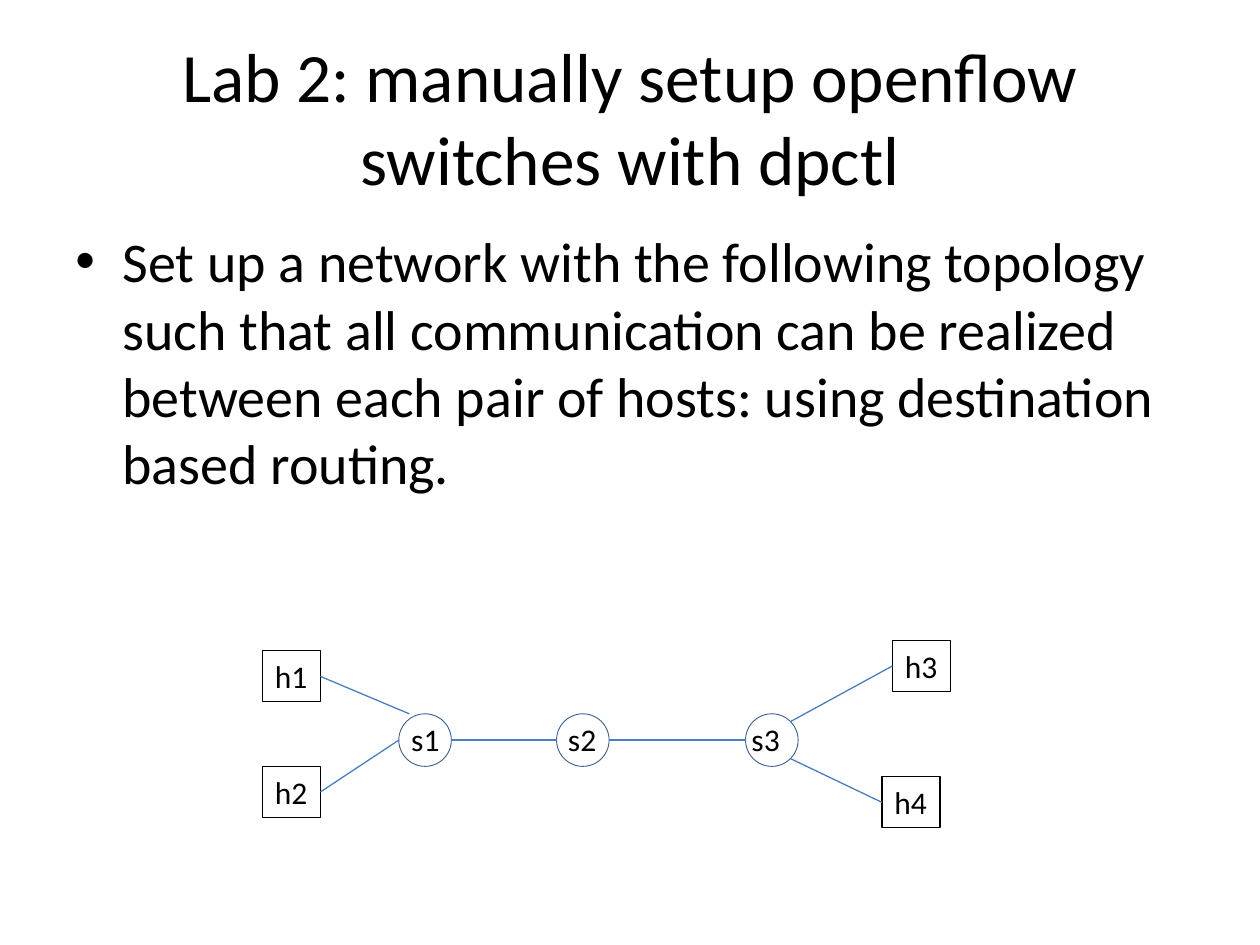
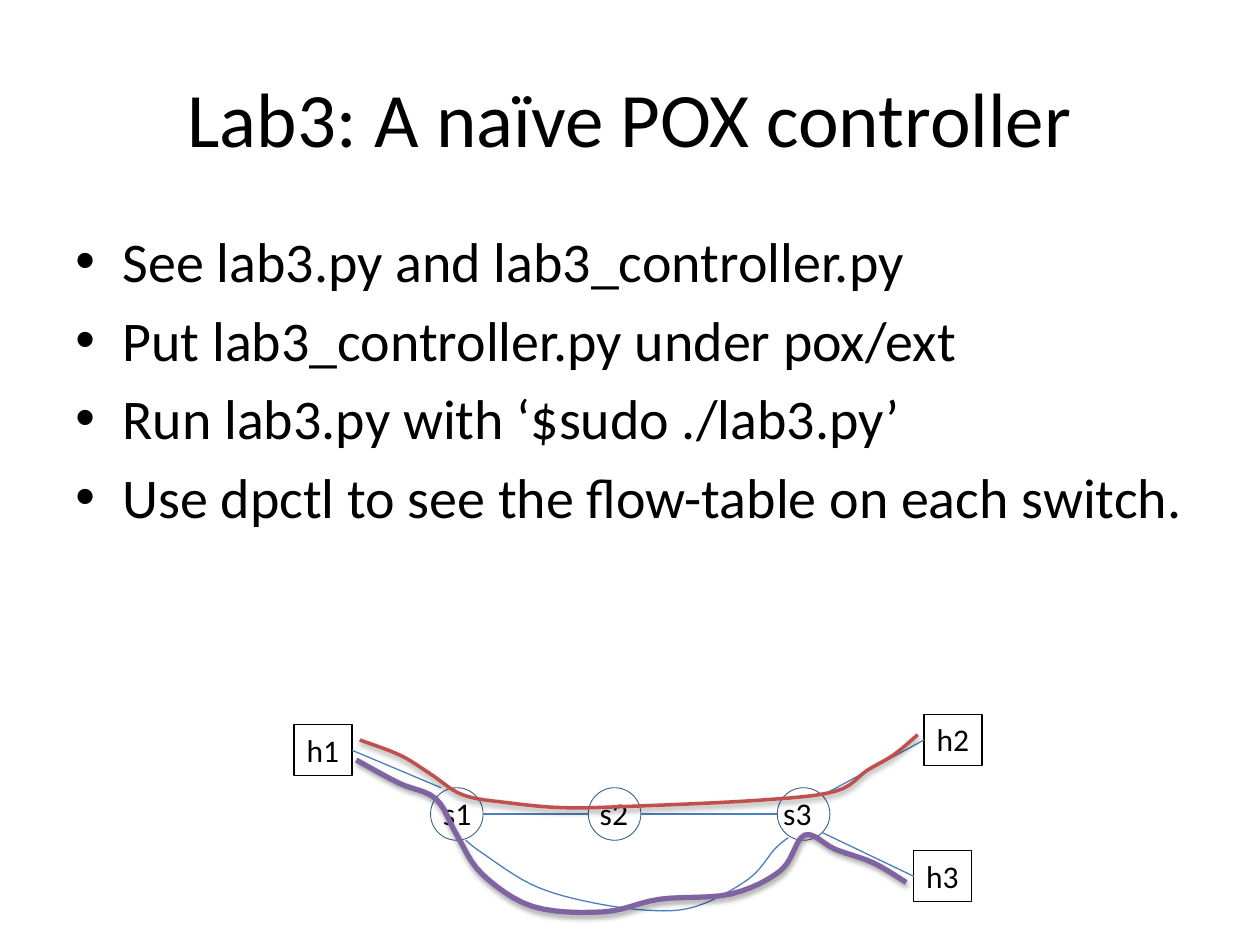
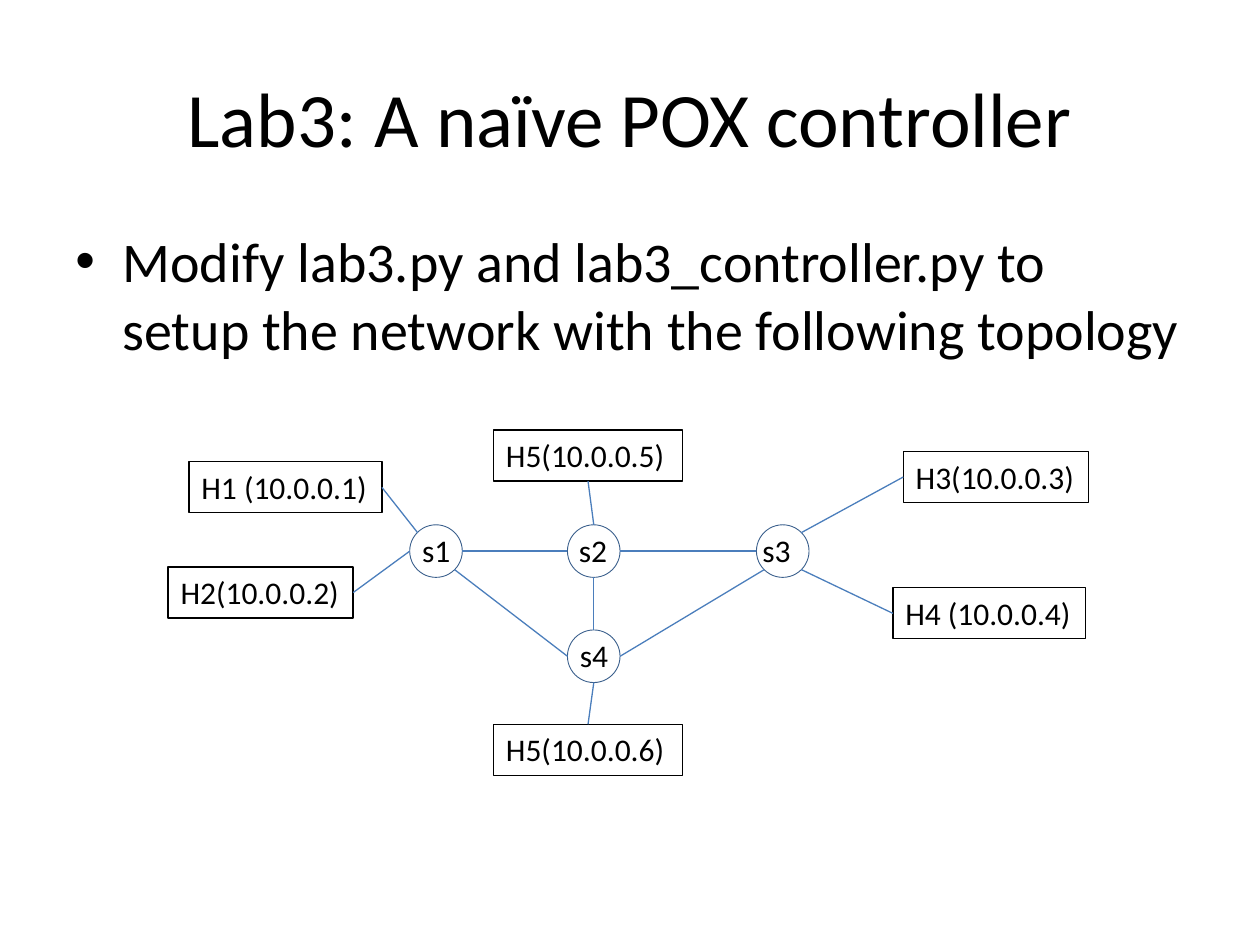
from dataclasses import dataclass

from lxml.etree import SubElement
from pptx import Presentation
from pptx.dml.color import RGBColor
from pptx.enum.shapes import MSO_CONNECTOR as Wire, MSO_SHAPE as Preset
from pptx.enum.text import MSO_ANCHOR as Anchor, MSO_AUTO_SIZE as Fit, PP_ALIGN as Align
from pptx.oxml.ns import qn
from pptx.util import Cm, Pt

Pair = tuple[float, float]

FONT = "Calibri"
BLACK = "000000"
SWITCH_EDGE = "3A5F8C"
WIRE_BLUE = "4B7EBC"
ROUTE_RED = "C0504D"
ROUTE_PURPLE = "8064A2"

TITLE_SIZE, BODY_SIZE, LABEL_SIZE = 44, 32, 18
MARGIN, CONTENT_WIDTH = 1.27, 22.86
TITLE_TOP, TITLE_HEIGHT, BODY_TOP = 0.76, 3.18, 4.45
BULLET_INDENT = 0.95

TOP, LEFT, BOTTOM, RIGHT = (0.5, 0), (0, 0.5), (0.5, 1), (1, 0.5)
TOP_LEFT, TOP_RIGHT = (0.15, 0.15), (0.85, 0.15)
BOTTOM_LEFT, BOTTOM_RIGHT = (0.15, 0.85), (0.85, 0.85)
OVER_LEFT = (0.2, 0)
SIDES = {TOP: 0, LEFT: 1, BOTTOM: 2, RIGHT: 3}

SWITCH_SIZE = 1.06
SWITCH_ROW = {"s1": 0, "s2": 3.18, "s3": 6.99}
LOWER_DROP = 2.12
LABEL_TABS = (3.16, 6.86)
ROW_LABEL_WIDTH, LOWER_LABEL_WIDTH = 8.31, 1.09
HOST_HEIGHT = 1.03
SHORT, ADDRESS, SPACED_ADDRESS, WRAPPED = 1.17, 3.73, 3.89, 3.81
UPPER_LEFT, UPPER_RIGHT, LOWER_RIGHT = (-2.75, -1.27), (9.95, -1.48), (9.74, 1.27)
CURVE_STEPS = 6


@dataclass(frozen=True)
class Host:
    label: str
    offset: Pair
    width: float = SHORT


@dataclass(frozen=True)
class Link:
    start: str
    start_spot: Pair
    end: str
    end_spot: Pair


@dataclass(frozen=True)
class Route:
    color: str
    weight: float
    stops: tuple[tuple[str, tuple[Pair, ...]], ...]
    shade: int = 0


@dataclass(frozen=True)
class Lab:
    title: str
    bullets: tuple[str, ...]
    origin: Pair
    hosts: tuple[Host, ...]
    links: tuple[Link, ...]
    routes: tuple[Route, ...] = ()
    lower_switch: bool = False
    title_size: float = TITLE_SIZE
    body_height: float = 12.57


BACKBONE = (Link("s1", RIGHT, "s2", LEFT), Link("s2", RIGHT, "s3", LEFT))


def right_links(upper: str, lower: str) -> tuple[Link, ...]:
    return (Link("s3", TOP_RIGHT, upper, LEFT), Link("s3", BOTTOM_RIGHT, lower, LEFT))


BYPASS = Route(WIRE_BLUE, 0.75, (
    ("s1", ((0.67, 1), (0.98, 1.24), (1.9, 1.83))),
    ("s2", ((-0.14, 2.14), (1.1, 2.33))),
    ("s3", ((-1.55, 2.26), (-0.55, 1.74), (-0.05, 1.17), (0.21, 0.95)))))
ROUTE_TO_H2 = Route(ROUTE_RED, 2, (
    ("h1", ((1.13, 0.3), (1.83, 0.6))),
    ("s1", ((0, -0.26), (0.62, 0.14), (1.5, 0.29))),
    ("s2", ((-0.5, 0.38), (0.67, 0.36))),
    ("s3", ((-0.36, 0.24), (1.1, 0.07), (1.71, -0.33))),
    ("h2", ((-0.52, 0.79), (-0.11, 0.4)))), shade=38)
ROUTE_TO_H3 = Route(ROUTE_PURPLE, 3, (
    ("h1", ((1.07, 0.69), (1.8, 1.14))),
    ("s1", ((0.1, 0.21), (0.5, 0.9), (0.98, 1.64), (1.95, 2.26))),
    ("s2", ((0.29, 2.36), (1.36, 2.12))),
    ("s3", ((-0.88, 2.02), (0.07, 1.57), (0.52, 0.9), (1.1, 1.17), (1.83, 1.43))),
    ("h3", ((-0.13, 0.62),))), shade=35)

DPCTL_LAB = Lab(
    "Lab 2: manually setup openflow switches with dpctl",
    ("Set up a network with the following topology such that all communication can be "
     "realized between each pair of hosts: using destination based routing.",),
    origin=(8.04, 14.39),
    hosts=(Host("h1", UPPER_LEFT), Host("h2", (-2.75, 1.06)),
           Host("h4", LOWER_RIGHT), Host("h3", UPPER_RIGHT)),
    links=(Link("h1", RIGHT, "s1", OVER_LEFT), Link("h2", RIGHT, "s1", LEFT),
           *BACKBONE, *right_links("h3", "h4")),
    title_size=39.6, body_height=6.99)

POX_LAB = Lab(
    "Lab3: A naïve POX controller",
    ("See lab3.py and lab3_controller.py",
     "Put lab3_controller.py under pox/ext",
     "Run lab3.py with ‘$sudo ./lab3.py’",
     "Use dpctl to see the flow-table on each switch."),
    origin=(8.68, 15.88),
    hosts=(Host("h1", UPPER_LEFT), Host("h3", LOWER_RIGHT), Host("h2", UPPER_RIGHT)),
    links=(Link("h1", RIGHT, "s1", OVER_LEFT), *BACKBONE, *right_links("h2", "h3")),
    routes=(BYPASS, ROUTE_TO_H2, ROUTE_TO_H3))

H1, H2, H3 = "H1 (10.0.0.1)", "H2(10.0.0.2)", "H3(10.0.0.3)"
H4, H5, H6 = "H4 (10.0.0.4)", "H5(10.0.0.5)", "H5(10.0.0.6)"
POX_EXERCISE = Lab(
    POX_LAB.title,
    ("Modify lab3.py and lab3_controller.py to setup the network with the following topology",),
    origin=(8.26, 10.58),
    hosts=(Host(H1, (-4.45, -1.27), SPACED_ADDRESS), Host(H2, (-4.87, 0.85), ADDRESS),
           Host(H4, LOWER_RIGHT, SPACED_ADDRESS), Host(H3, UPPER_RIGHT, ADDRESS),
           Host(H5, (1.69, -1.91), WRAPPED), Host(H6, (1.69, 4.02), WRAPPED)),
    links=(Link(H1, RIGHT, "s1", TOP_LEFT), Link(H2, RIGHT, "s1", LEFT),
           *BACKBONE, *right_links(H3, H4),
           Link("s1", BOTTOM_RIGHT, "s4", LEFT), Link("s2", BOTTOM, "s4", TOP),
           Link("s4", RIGHT, "s3", BOTTOM_LEFT),
           Link(H5, BOTTOM, "s2", TOP), Link(H6, TOP, "s4", BOTTOM)),
    lower_switch=True)


def rgb(code: str) -> RGBColor:
    return RGBColor.from_string(code)


def add_span(para, text: str, size: float) -> None:
    span = para.add_run()
    span.text = text
    span.font.name = FONT
    span.font.size = Pt(size)
    span.font.color.rgb = rgb(BLACK)


def outline(shape, color: str, weight: float) -> None:
    shape.line.color.rgb = rgb(color)
    shape.line.width = Pt(weight)


def make_hollow(shape, color: str, weight: float) -> None:
    shape.shadow.inherit = False
    shape.fill.background()
    outline(shape, color, weight)


def add_title(page, lab: Lab) -> None:
    title = page.shapes.title
    title.left, title.top = Cm(MARGIN), Cm(TITLE_TOP)
    title.width, title.height = Cm(CONTENT_WIDTH), Cm(TITLE_HEIGHT)
    frame = title.text_frame
    frame.auto_size = Fit.NONE
    frame.vertical_anchor = Anchor.MIDDLE
    para = frame.paragraphs[0]
    para.alignment = Align.CENTER
    add_span(para, lab.title, lab.title_size)


def add_bullets(page, lab: Lab) -> None:
    box = page.shapes.add_textbox(
        Cm(MARGIN), Cm(BODY_TOP), Cm(CONTENT_WIDTH), Cm(lab.body_height))
    frame = box.text_frame
    frame.word_wrap = True
    for index, text in enumerate(lab.bullets):
        para = frame.add_paragraph() if index else frame.paragraphs[0]
        if index:
            para.space_before = Pt(BODY_SIZE * 0.2)
        props = para._p.get_or_add_pPr()
        props.set("marL", str(Cm(BULLET_INDENT)))
        props.set("indent", str(-Cm(BULLET_INDENT)))
        SubElement(props, qn("a:buFont"), typeface="Arial")
        SubElement(props, qn("a:buChar"), char="•")
        add_span(para, text, BODY_SIZE)


def add_labels(page, left: float, top: float, width: float, names: list[str]) -> None:
    box = page.shapes.add_textbox(Cm(left), Cm(top), Cm(width), Cm(HOST_HEIGHT))
    frame = box.text_frame
    frame.word_wrap = True
    para = frame.paragraphs[0]
    if len(names) > 1:
        tabs = SubElement(para._p.get_or_add_pPr(), qn("a:tabLst"))
        for stop in LABEL_TABS:
            SubElement(tabs, qn("a:tab"), pos=str(Cm(stop)), algn="l")
    add_span(para, "\t".join(names), LABEL_SIZE)


def add_host(page, origin: Pair, host: Host):
    left, top = origin[0] + host.offset[0], origin[1] + host.offset[1]
    box = page.shapes.add_shape(
        Preset.RECTANGLE, Cm(left), Cm(top), Cm(host.width), Cm(HOST_HEIGHT))
    make_hollow(box, BLACK, 0.75)
    frame = box.text_frame
    frame.word_wrap = host.width == WRAPPED
    frame.auto_size = Fit.SHAPE_TO_FIT_TEXT
    frame.vertical_anchor = Anchor.TOP
    para = frame.paragraphs[0]
    para.alignment = Align.LEFT
    add_span(para, host.label, LABEL_SIZE)
    return box


def add_switch(page, left: float, top: float):
    ring = page.shapes.add_shape(
        Preset.OVAL, Cm(left), Cm(top), Cm(SWITCH_SIZE), Cm(SWITCH_SIZE))
    make_hollow(ring, SWITCH_EDGE, 0.5)
    return ring


def spot_on(shape, spot: Pair) -> tuple[int, int]:
    return (round(shape.left + spot[0] * shape.width), round(shape.top + spot[1] * shape.height))


def add_link(page, nodes: dict, link: Link) -> None:
    start, end = nodes[link.start], nodes[link.end]
    wire = page.shapes.add_connector(
        Wire.STRAIGHT, *spot_on(start, link.start_spot), *spot_on(end, link.end_spot))
    outline(wire, WIRE_BLUE, 0.75)
    SubElement(wire._element.spPr, qn("a:effectLst"))
    if start.auto_shape_type == Preset.RECTANGLE:
        wire.begin_connect(start, SIDES[link.start_spot])
    if end.auto_shape_type == Preset.RECTANGLE:
        wire.end_connect(end, SIDES[link.end_spot])


def spline(before: int, start: int, end: int, after: int, t: float) -> int:
    return round(start + t / 2 * (
        end - before
        + t * (2 * before - 5 * start + 4 * end - after)
        + t * t * (3 * (start - end) + after - before)))


def smooth(points: list[tuple[int, int]]) -> list[tuple[int, int]]:
    padded = [points[0], *points, points[-1]]
    curve = [points[0]]
    for window in zip(padded, padded[1:], padded[2:], padded[3:]):
        across, down = zip(*window)
        for step in range(1, CURVE_STEPS + 1):
            t = step / CURVE_STEPS
            curve.append((spline(*across, t), spline(*down, t)))
    return curve


def add_shade(shape, percent: int) -> None:
    effects = shape._element.spPr.find(qn("a:effectLst"))
    shadow = SubElement(effects, qn("a:outerShdw"), blurRad=str(Pt(3.1)),
                        dist=str(Pt(1.6)), dir="5400000", rotWithShape="0")
    color = SubElement(shadow, qn("a:srgbClr"), val=BLACK)
    SubElement(color, qn("a:alpha"), val=str(percent * 1000))


def add_route(page, nodes: dict, route: Route) -> None:
    points = [spot_on(nodes[name], spot) for name, spots in route.stops for spot in spots]
    first, *rest = smooth(points)
    builder = page.shapes.build_freeform(*first)
    builder.add_line_segments(rest, close=False)
    curve = builder.convert_to_shape()
    make_hollow(curve, route.color, route.weight)
    if route.shade:
        add_shade(curve, route.shade)


def add_network(page, lab: Lab) -> None:
    left, top = lab.origin
    add_labels(page, left, top, ROW_LABEL_WIDTH, list(SWITCH_ROW))
    nodes = {host.label: add_host(page, lab.origin, host) for host in lab.hosts}
    for name, offset in SWITCH_ROW.items():
        nodes[name] = add_switch(page, left + offset, top)
    if lab.lower_switch:
        lower_left, lower_top = left + SWITCH_ROW["s2"], top + LOWER_DROP
        add_labels(page, lower_left, lower_top, LOWER_LABEL_WIDTH, ["s4"])
        nodes["s4"] = add_switch(page, lower_left, lower_top)
    for link in lab.links:
        add_link(page, nodes, link)
    for route in lab.routes:
        add_route(page, nodes, route)


def main() -> None:
    deck = Presentation()
    deck.slide_width, deck.slide_height = Cm(25.4), Cm(19.05)
    for lab in (DPCTL_LAB, POX_LAB, POX_EXERCISE):
        page = deck.slides.add_slide(deck.slide_layouts[5])
        add_title(page, lab)
        add_bullets(page, lab)
        add_network(page, lab)
    deck.save("out.pptx")


if __name__ == "__main__":
    main()
